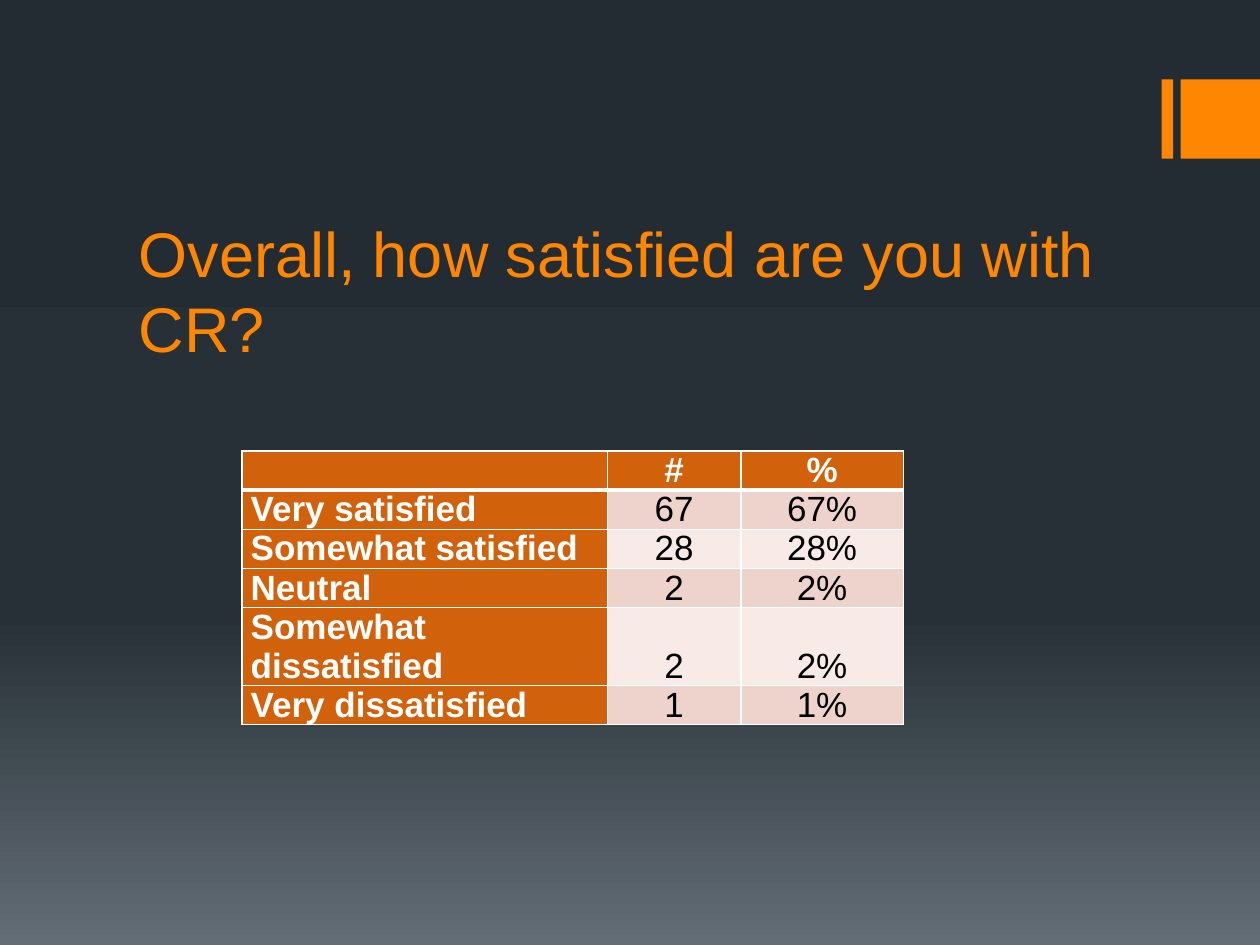
from copy import deepcopy

from lxml import etree
from pptx import Presentation
from pptx.dml.color import RGBColor
from pptx.enum.shapes import MSO_SHAPE
from pptx.enum.text import MSO_ANCHOR, MSO_AUTO_SIZE, PP_ALIGN
from pptx.oxml.ns import qn
from pptx.util import Inches, Pt

RECTANGLE = MSO_SHAPE.RECTANGLE
BOTTOM = MSO_ANCHOR.BOTTOM
NO_AUTOFIT = MSO_AUTO_SIZE.NONE
LEFT, CENTER = PP_ALIGN.LEFT, PP_ALIGN.CENTER

FONT = "Arial"
COLORS = {
    "night": "242C33",
    "slate": "273037",
    "mist": "636D76",
    "accent": "FF8600",
    "header": "D2610C",
    "odd_row": "EED2CC",
    "even_row": "F7EAE7",
    "white": "FFFFFF",
    "black": "000000",
}
ANSWERS = [
    ("", "#", "%"),
    ("Very satisfied", "67", "67%"),
    ("Somewhat satisfied", "28", "28%"),
    ("Neutral", "2", "2%"),
    ("Somewhat dissatisfied", "2", "2%"),
    ("Very dissatisfied", "1", "1%"),
]
COLUMN_WIDTHS = (2.9, 1.06, 1.29)


def color(name):
    return RGBColor.from_string(COLORS[name])


def style_text(paragraph, size, color_name, bold, align):
    paragraph.alignment = align
    for run in paragraph.runs:
        run.font.name = FONT
        run.font.size = Pt(size)
        run.font.bold = bold
        run.font.color.rgb = color(color_name)


def paint_background(slide):
    fill = slide.background.fill
    fill.gradient()
    fill.gradient_angle = 270
    stop_list = slide.element.xpath(".//a:gsLst")[0]
    stop_list.insert(1, deepcopy(stop_list[0]))
    shades = ((0, "night"), (0.65, "slate"), (1, "mist"))
    for stop, (position, shade) in zip(fill.gradient_stops, shades):
        stop.position = position
        stop.color.rgb = color(shade)


def add_accent(slide, left, top, width, height):
    bar_width, gap = 0.09, 0.06
    block_left = left + bar_width + gap
    parts = ((left, bar_width), (block_left, width - bar_width - gap))
    for part_left, part_width in parts:
        bar = slide.shapes.add_shape(
            RECTANGLE, Inches(part_left), Inches(top), Inches(part_width), Inches(height)
        )
        bar.shadow.inherit = False
        bar.fill.solid()
        bar.fill.fore_color.rgb = color("accent")
        bar.line.fill.background()


def place_title(slide, left, top, width, height):
    title = slide.shapes.title
    title.left, title.top = Inches(left), Inches(top)
    title.width, title.height = Inches(width), Inches(height)
    frame = title.text_frame
    frame.text = "Overall, how satisfied are you with CR?"
    frame.word_wrap = True
    frame.auto_size = NO_AUTOFIT
    frame.vertical_anchor = BOTTOM
    style_text(frame.paragraphs[0], 36, "accent", False, LEFT)


def add_borders(cell, top, bottom):
    properties = cell._tc.get_or_add_tcPr()
    for side, points in (("lnL", 1), ("lnR", 1), ("lnT", top), ("lnB", bottom)):
        border = etree.SubElement(properties, qn(f"a:{side}"), w=str(Pt(points)))
        solid = etree.SubElement(border, qn("a:solidFill"))
        etree.SubElement(solid, qn("a:srgbClr"), val=COLORS["white"])


def add_answers(slide, left, top, width, height):
    table = slide.shapes.add_table(
        len(ANSWERS), len(COLUMN_WIDTHS),
        Inches(left), Inches(top), Inches(width), Inches(height),
    ).table
    for column, column_width in zip(table.columns, COLUMN_WIDTHS):
        column.width = Inches(column_width)
    for row_index, answer in enumerate(ANSWERS):
        table.rows[row_index].height = Inches(0.21)
        band = "odd_row" if row_index % 2 else "even_row"
        for column_index, value in enumerate(answer):
            is_heading = row_index == 0 or column_index == 0
            cell = table.cell(row_index, column_index)
            add_borders(cell, 3 if row_index == 1 else 1, 3 if row_index == 0 else 1)
            cell.fill.solid()
            cell.fill.fore_color.rgb = color("header" if is_heading else band)
            cell.margin_left = cell.margin_right = Inches(0.07)
            cell.margin_top = cell.margin_bottom = 0
            cell.vertical_anchor = BOTTOM
            cell.text_frame.text = value
            style_text(
                cell.text_frame.paragraphs[0], 20,
                "white" if is_heading else "black", is_heading,
                CENTER if column_index else LEFT,
            )


def main():
    presentation = Presentation()
    presentation.slide_width, presentation.slide_height = Inches(10), Inches(7.5)
    slide = presentation.slides.add_slide(presentation.slide_layouts[5])
    paint_background(slide)
    add_accent(slide, 9.22, 0.63, 0.78, 0.63)
    place_title(slide, 1, 1.69, 8, 1.26)
    add_answers(slide, 1.92, 3.58, 5.25, 1.26)
    presentation.save("out.pptx")


if __name__ == "__main__":
    main()
